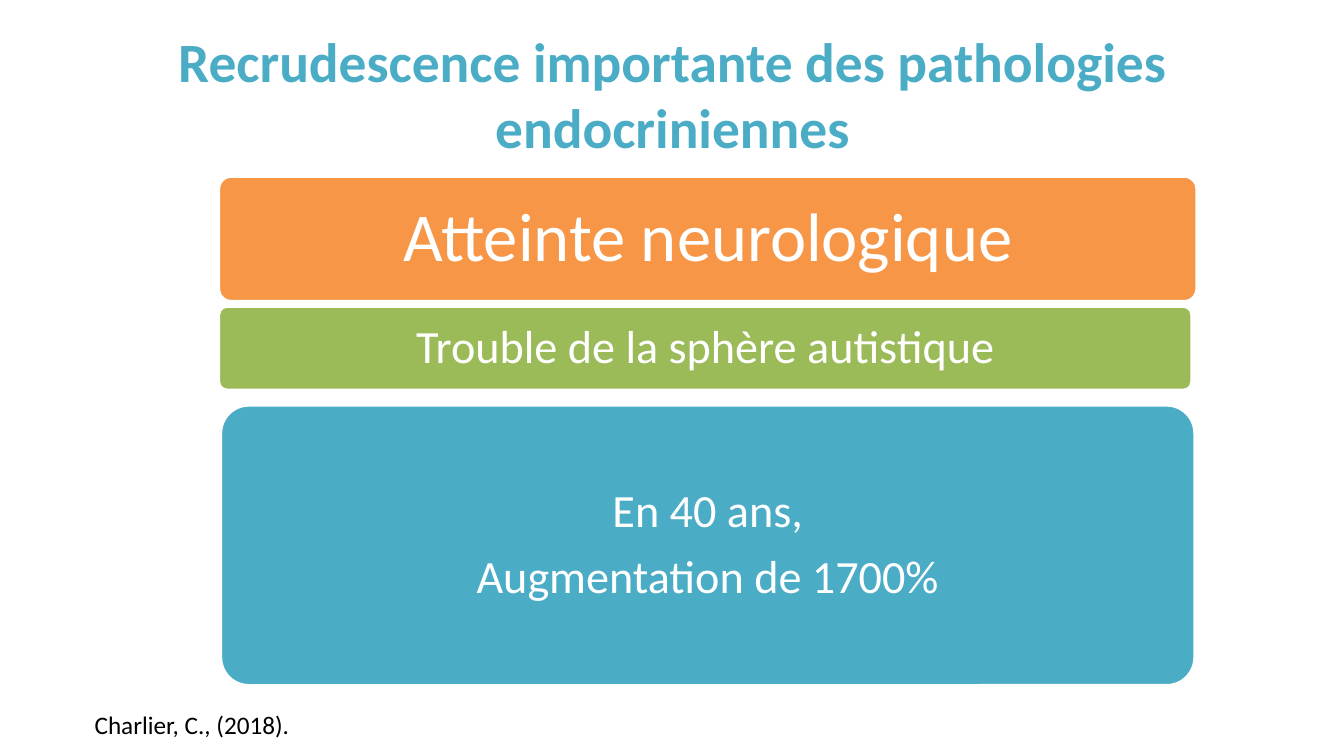
"""Build a slide on the rise of endocrine disorders, with three stacked panels."""
from dataclasses import dataclass

from pptx import Presentation
from pptx.dml.color import RGBColor
from pptx.enum.shapes import MSO_SHAPE
from pptx.enum.text import MSO_ANCHOR, MSO_AUTO_SIZE, PP_ALIGN
from pptx.slide import Slide
from pptx.text.text import TextFrame
from pptx.util import Emu, Pt

EMU_PER_PX = 9144
FONT = "Calibri"
ROUNDED = MSO_SHAPE.ROUNDED_RECTANGLE
MIDDLE, TOP = MSO_ANCHOR.MIDDLE, MSO_ANCHOR.TOP
CENTER, LEFT = PP_ALIGN.CENTER, PP_ALIGN.LEFT
NO_AUTOFIT, FIT_SHAPE = MSO_AUTO_SIZE.NONE, MSO_AUTO_SIZE.SHAPE_TO_FIT_TEXT

ORANGE = RGBColor(0xF7, 0x96, 0x46)
GREEN = RGBColor(0x9B, 0xBB, 0x59)
BLUE = RGBColor(0x4B, 0xAC, 0xC6)
WHITE = RGBColor(0xFF, 0xFF, 0xFF)
BLACK = RGBColor(0x00, 0x00, 0x00)


@dataclass(frozen=True)
class Panel:
    lines: tuple[str, ...]
    left: int
    top: int
    width: int
    height: int
    fill: RGBColor
    size: int
    inset: int


PANELS = (
    Panel(("Atteinte neurologique",), 217, 175, 970, 124, ORANGE, 49, 24),
    Panel(("Trouble de la sphère autistique",), 217, 304, 965, 83, GREEN, 33, 16),
    Panel(("En 40 ans,", "Augmentation de 1700%"), 219, 402, 966, 278, BLUE, 33, 22),
)


def px(length: int) -> Emu:
    return Emu(length * EMU_PER_PX)


def write_text(frame: TextFrame, *lines: str, size: float, color: RGBColor,
               bold: bool = False, align: PP_ALIGN = CENTER,
               anchor: MSO_ANCHOR = MIDDLE, wrap: bool = True,
               line_spacing: float = 1.0, space_after: float = 0) -> None:
    frame.word_wrap = wrap
    frame.vertical_anchor = anchor
    for index, line in enumerate(lines):
        paragraph = frame.add_paragraph() if index else frame.paragraphs[0]
        paragraph.alignment = align
        paragraph.line_spacing = line_spacing
        paragraph.space_after = Pt(space_after)
        run = paragraph.add_run()
        run.text = line
        run.font.name = FONT
        run.font.size = Pt(size)
        run.font.bold = bold
        run.font.color.rgb = color


def add_title(slide: Slide) -> None:
    title = slide.shapes.title
    title.left, title.top = px(67), px(30)
    title.width, title.height = px(1200), px(125)
    title.text_frame.auto_size = NO_AUTOFIT
    write_text(title.text_frame, "Recrudescence importante des pathologies endocriniennes",
               size=39.6, color=BLUE, bold=True)


def add_panel(slide: Slide, panel: Panel) -> None:
    shape = slide.shapes.add_shape(ROUNDED, px(panel.left), px(panel.top),
                                   px(panel.width), px(panel.height))
    shape.adjustments[0] = 0.1
    shape.shadow.inherit = False
    shape.fill.solid()
    shape.fill.fore_color.rgb = panel.fill
    shape.line.color.rgb = WHITE
    shape.line.width = Pt(2)
    frame = shape.text_frame
    frame.margin_left = frame.margin_right = px(panel.inset)
    frame.margin_top = frame.margin_bottom = px(panel.inset)
    write_text(frame, *panel.lines, size=panel.size, color=WHITE,
               line_spacing=0.9, space_after=round(panel.size * 0.35, 1))


def add_citation(slide: Slide) -> None:
    box = slide.shapes.add_textbox(px(84), px(699), px(216), px(40))
    box.text_frame.auto_size = FIT_SHAPE
    write_text(box.text_frame, "Charlier, C., (2018).", size=18, color=BLACK,
               align=LEFT, anchor=TOP, wrap=False)


def main() -> None:
    presentation = Presentation()
    presentation.slide_width, presentation.slide_height = px(1333), px(750)
    slide = presentation.slides.add_slide(presentation.slide_layouts.get_by_name("Title Only"))
    add_title(slide)
    for panel in PANELS:
        add_panel(slide, panel)
    add_citation(slide)
    presentation.save("out.pptx")


if __name__ == "__main__":
    main()
